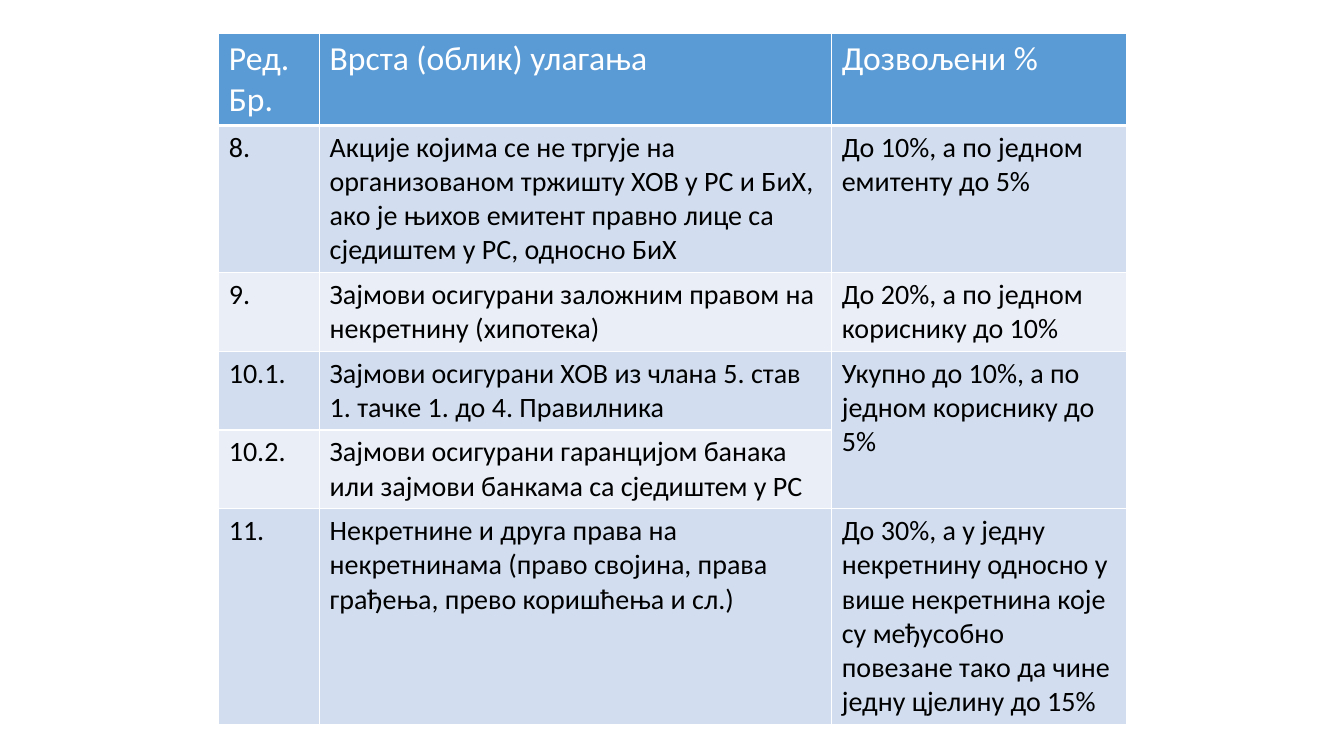
from lxml import etree
from pptx import Presentation
from pptx.dml.color import RGBColor
from pptx.oxml.ns import qn
from pptx.util import Inches, Pt

# Content
HEADINGS = ("Ред. Бр.", "Врста (облик) улагања", "Дозвољени %")
INVESTMENTS = [
    ("8.", "Акције којима се не тргује на организованом тржишту ХОВ у РС и БиХ, "
           "ако је њихов емитент правно лице са сједиштем у РС, односно БиХ",
     "До 10%, а по једном емитенту до 5%"),
    ("9.", "Зајмови осигурани заложним правом на некретнину (хипотека)",
     "До 20%, а по једном кориснику до 10%"),
    ("10.1.", "Зајмови осигурани ХОВ из члана 5. став 1. тачке 1. до 4. Правилника",
     "Укупно до 10%, а по једном кориснику до 5%"),
    ("10.2.", "Зајмови осигурани гаранцијом банака или зајмови банкама са сједиштем у РС",
     None),  # shares the limit of the row above
    ("11.", "Некретнине и друга права на некретнинама (право својина, права грађења, "
            "прево коришћења и сл.)",
     "До 30%, а у једну некретнину односно у више некретнина које су међусобно "
     "повезане тако да чине једну цјелину до 15%"),
]
COLUMN_WIDTHS = (1, 5.08, 2.92)
ROW_HEIGHTS = (0.91, 1.46, 0.78, 0.78, 0.78, 2.13)

# Look
FONT = "Calibri"
WHITE = RGBColor(0xFF, 0xFF, 0xFF)
BLACK = RGBColor(0x00, 0x00, 0x00)
HEADER_BLUE = RGBColor(0x5B, 0x9B, 0xD5)
BANDS = (RGBColor(0xD2, 0xDE, 0xEF), RGBColor(0xEA, 0xEF, 0xF7))


def add_borders(cell, bottom_width):
    """Draw white cell borders, placed ahead of the cell's fill."""
    properties = cell._tc.get_or_add_tcPr()
    widths = {"a:lnL": 1, "a:lnR": 1, "a:lnT": 1, "a:lnB": bottom_width}
    for position, (side, width) in enumerate(widths.items()):
        line = etree.Element(qn(side), w=str(Pt(width)))
        fill = etree.SubElement(line, qn("a:solidFill"))
        etree.SubElement(fill, qn("a:srgbClr"), val=str(WHITE))
        properties.insert(position, line)


def fill_cell(cell, text, size, color, background, bottom_width=1):
    cell.fill.solid()
    cell.fill.fore_color.rgb = background
    add_borders(cell, bottom_width)
    if text is None:
        return
    run = cell.text_frame.paragraphs[0].add_run()
    run.text = text
    run.font.name = FONT
    run.font.size = Pt(size)
    run.font.bold = False
    run.font.color.rgb = color


prs = Presentation()
prs.slide_width, prs.slide_height = Inches(13.33), Inches(7.5)
slide = prs.slides.add_slide(prs.slide_layouts[6])

# Table grid
limits = slide.shapes.add_table(
    len(ROW_HEIGHTS), len(COLUMN_WIDTHS), Inches(2.17), Inches(0.33),
    Inches(sum(COLUMN_WIDTHS)), Inches(sum(ROW_HEIGHTS))).table
for column, width in zip(limits.columns, COLUMN_WIDTHS):
    column.width = Inches(width)
for row, height in zip(limits.rows, ROW_HEIGHTS):
    row.height = Inches(height)

# Header row
for column, heading in enumerate(HEADINGS):
    fill_cell(limits.cell(0, column), heading, 24, WHITE, HEADER_BLUE, bottom_width=3)

# Banded investment rows
for row, investment in enumerate(INVESTMENTS, start=1):
    for column, text in enumerate(investment):
        fill_cell(limits.cell(row, column), text, 20, BLACK, BANDS[(row - 1) % 2])
        if text is None:
            limits.cell(row - 1, column).merge(limits.cell(row, column))

prs.save("out.pptx")
